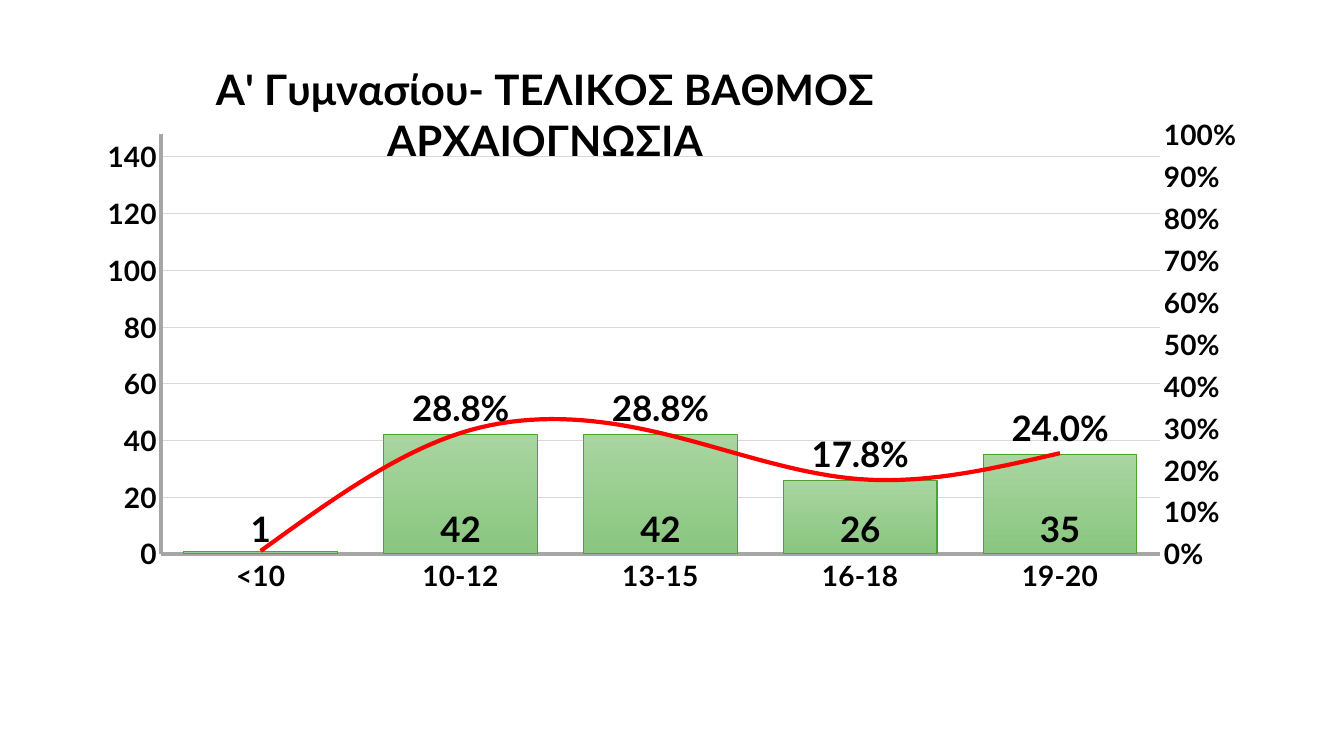
from dataclasses import dataclass
from pptx import Presentation
from pptx.chart.axis import ValueAxis
from pptx.chart.data import CategoryChartData
from pptx.dml.color import RGBColor
from pptx.enum.chart import (XL_CHART_TYPE, XL_LABEL_POSITION, XL_MARKER_STYLE,
                             XL_TICK_MARK)
from pptx.oxml import parse_xml
from pptx.oxml.ns import nsdecls, qn
from pptx.util import Cm, Pt


@dataclass(frozen=True)
class Theme:
    font: str = "Lato"
    ink: str = "000000"
    grid: str = "D9D9D9"
    axis: str = "A6A6A6"
    top: str = "A8D5A0"
    base: str = "8AC680"
    edge: str = "4CA32D"
    curve: str = "FF0000"
    head: int = 30
    label: int = 25
    tick: int = 20
    thin: float = 0.75
    thick: int = 3


def shade(code):
    return RGBColor.from_string(code)


def make(tag, body):
    return parse_xml(f"<c:{tag} {nsdecls('c')}>{body}</c:{tag}>")


def place(owner, index, **spots):
    for old in owner.findall(qn("c:layout")):
        owner.remove(old)
    inner = '<c:layoutTarget val="inner"/>' if "w" in spots else ""
    modes = "".join(f'<c:{key}Mode val="edge"/>' for key in "xy")
    sizes = "".join(f'<c:{key} val="{val}"/>' for key, val in spots.items())
    body = f"<c:manualLayout>{inner}{modes}{sizes}</c:manualLayout>"
    owner.insert(index, make("layout", body))


class Deck:
    def __init__(self, theme):
        self.theme = theme
        self.file = Presentation()
        self.file.slide_width, self.file.slide_height = Cm(33.87), Cm(19.05)
        self.slide = self.file.slides.add_slide(self.file.slide_layouts[6])

    def type(self, font, size):
        font.name, font.size, font.bold = self.theme.font, Pt(size), True
        font.color.rgb = shade(self.theme.ink)

    def stroke(self, line, code, width):
        line.color.rgb = shade(code)
        line.width = Pt(width)

    def chart(self, names, counts, shares, box):
        data = CategoryChartData()
        data.categories = names
        data.add_series("Series 1", counts)
        data.add_series("Series 2", shares, "0.0%")
        frame = self.slide.shapes.add_chart(
            XL_CHART_TYPE.COLUMN_CLUSTERED, *map(Cm, box), data)
        chart = frame.chart
        chart.has_legend = False
        self.type(chart.font, 10)
        return chart

    def title(self, chart, text):
        chart.has_title = True
        title = chart.chart_title
        title.text_frame.text = text
        self.type(title.text_frame.paragraphs[0].runs[0].font, self.theme.head)
        place(title._element, 1, x=0.1, y=0.01)

    def split(self, chart):
        bars = chart.plots[0]
        plot = bars._element.getparent()
        curve = bars.series[1]._element
        for flag in curve.findall(qn("c:invertIfNegative")):
            curve.remove(flag)
        lines = make("lineChart", '<c:grouping val="standard"/>'
                     '<c:varyColors val="0"/><c:marker val="1"/>'
                     '<c:axId val="501"/><c:axId val="502"/>')
        lines.insert(2, curve)
        bars._element.addnext(lines)
        hidden = make("catAx", '<c:axId val="501"/><c:scaling/>'
                      '<c:delete val="1"/><c:axPos val="b"/>'
                      '<c:crossAx val="502"/>')
        right = make("valAx", '<c:axId val="502"/><c:scaling/>'
                     '<c:delete val="0"/><c:axPos val="r"/>'
                     '<c:tickLblPos val="nextTo"/><c:crossAx val="501"/>'
                     '<c:crosses val="max"/><c:crossBetween val="between"/>')
        chart.value_axis._element.addnext(right)
        right.addprevious(hidden)
        place(plot, 0, x=0.059, y=0.139, w=0.862, h=0.661)
        return ValueAxis(right)

    def axis(self, axis, line=True):
        axis.major_tick_mark = axis.minor_tick_mark = XL_TICK_MARK.NONE
        self.type(axis.tick_labels.font, self.theme.tick)
        if line:
            self.stroke(axis.format.line, self.theme.axis, self.theme.thick)
        else:
            axis.format.line.fill.background()

    def scale(self, axis, high, step, form):
        axis.minimum_scale, axis.maximum_scale = 0, high
        axis.major_unit = step
        axis.tick_labels.number_format = form
        axis.tick_labels.number_format_is_linked = False

    def labels(self, series, spot, form):
        labels = series.data_labels
        labels.show_value = True
        labels.position = spot
        labels.number_format = form
        labels.number_format_is_linked = False
        self.type(labels.font, self.theme.label)
        return labels

    def bars(self, plot):
        plot.gap_width, plot.vary_by_categories = 30, False
        series = plot.series[0]
        fill = series.format.fill
        fill.gradient()
        fill.gradient_angle = 270
        for stop, code in zip(fill.gradient_stops,
                              (self.theme.top, self.theme.base)):
            stop.color.rgb = shade(code)
        self.stroke(series.format.line, self.theme.edge, self.theme.thin)
        self.labels(series, XL_LABEL_POSITION.INSIDE_BASE, "General")

    def curve(self, plot):
        series = plot.series[0]
        series.smooth = True
        series.marker.style = XL_MARKER_STYLE.NONE
        self.stroke(series.format.line, self.theme.curve, self.theme.thick)
        labels = self.labels(series, XL_LABEL_POSITION.ABOVE, "0.0%")
        labels._element.insert(
            0, make("dLbl", '<c:idx val="0"/><c:delete val="1"/>'))


def main():
    deck = Deck(Theme())
    chart = deck.chart(
        ("<10", "10-12", "13-15", "16-18", "19-20"),
        (1, 42, 42, 26, 35), (0.007, 0.288, 0.288, 0.178, 0.24),
        (2.33, 1.16, 29.21, 16))
    deck.title(chart, "A' Γυμνασίου- ΤΕΛΙΚΟΣ ΒΑΘΜΟΣ ΑΡΧΑΙΟΓΝΩΣΙΑ")
    left = chart.value_axis
    right = deck.split(chart)
    deck.axis(chart.category_axis)
    deck.axis(left)
    deck.axis(right, line=False)
    deck.scale(left, 148, 20, "General")
    deck.scale(right, 1, 0.1, "0%")
    deck.stroke(left.major_gridlines.format.line, deck.theme.grid,
                deck.theme.thin)
    deck.bars(chart.plots[0])
    deck.curve(chart.plots[1])
    deck.file.save("out.pptx")


if __name__ == "__main__":
    main()
